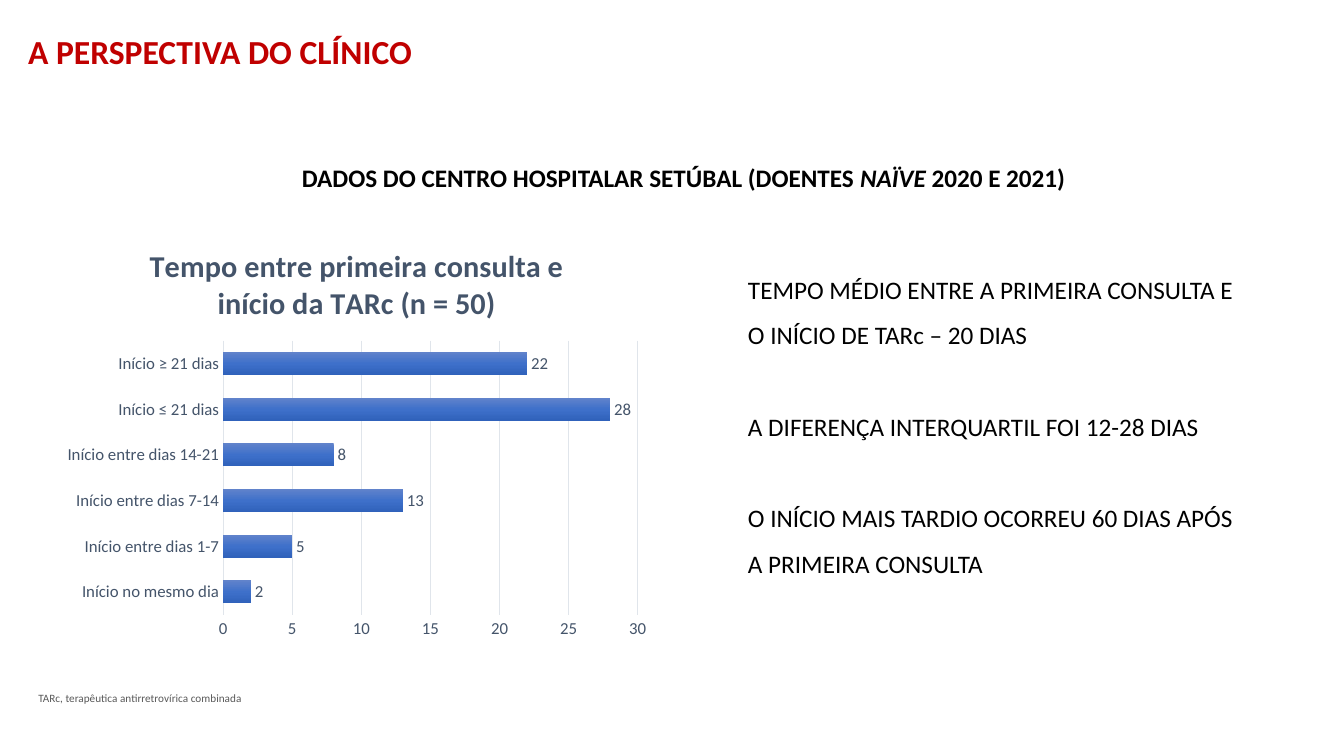
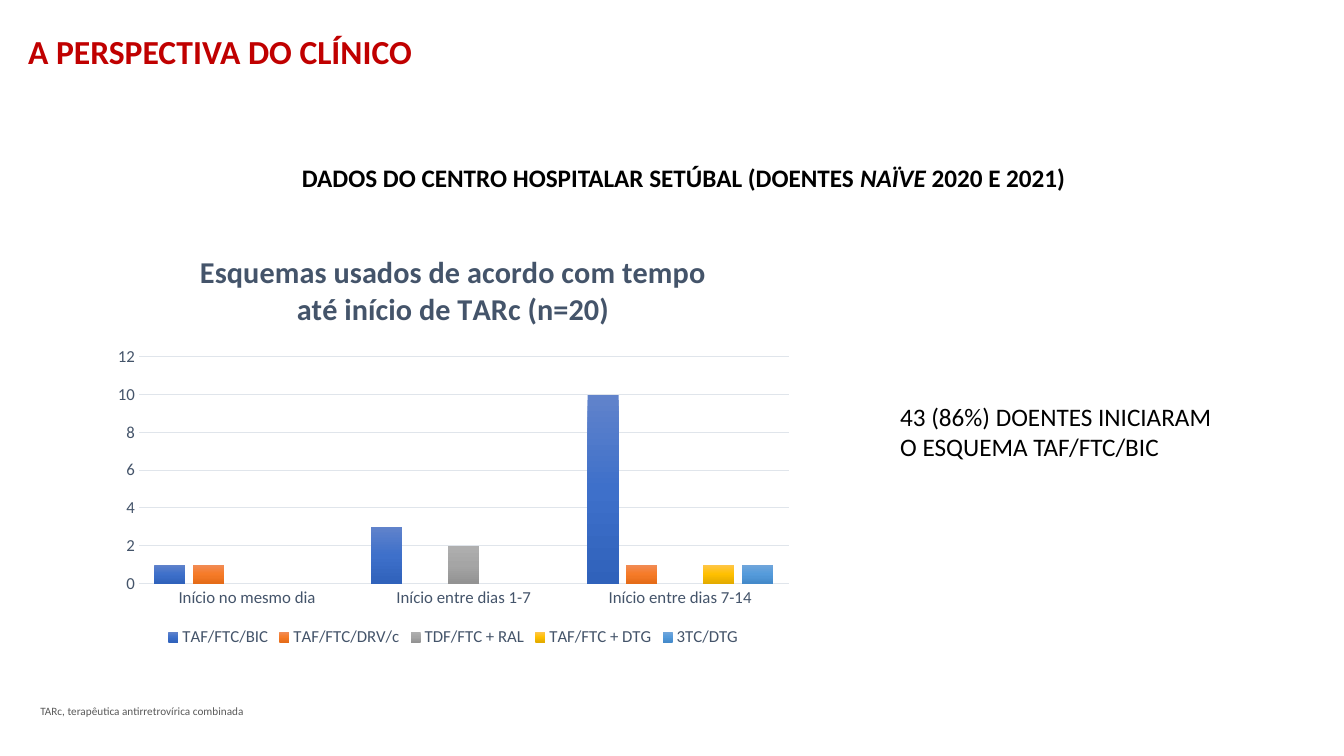
from copy import deepcopy

from pptx import Presentation
from pptx.chart.data import CategoryChartData
from pptx.dml.color import RGBColor
from pptx.enum.chart import XL_CHART_TYPE, XL_LABEL_POSITION, XL_LEGEND_POSITION, XL_TICK_MARK
from pptx.enum.text import PP_ALIGN
from pptx.util import Inches, Pt

BAR = XL_CHART_TYPE.BAR_CLUSTERED
COLUMN = XL_CHART_TYPE.COLUMN_CLUSTERED
OUTSIDE_END = XL_LABEL_POSITION.OUTSIDE_END
LEGEND_BOTTOM = XL_LEGEND_POSITION.BOTTOM
NO_TICK = XL_TICK_MARK.NONE
CENTER = PP_ALIGN.CENTER

FONT = "Calibri"
RED, BLACK, GRAY = "C00000", "000000", "595959"
SLATE, GRID = "44546A", "E0E5EB"
SERIES_GRADIENTS = [
    ("6183CB", "3E70CA", "3062BB"),
    ("F18C57", "F67B28", "E56C19"),
    ("AFAFAF", "A5A5A5", "939393"),
    ("FFC64B", "FFC000", "E3AB00"),
    ("71A6DB", "559BDB", "448ACA"),
]

TIME_CATEGORIES = [
    "Início no mesmo dia", "Início entre dias 1-7", "Início entre dias 7-14",
    "Início entre dias 14-21", "Início ≤ 21 dias", "Início ≥ 21 dias",
]
TIME_SERIES = {"Series 1": [2, 5, 13, 8, 28, 22]}
REGIMEN_SERIES = {
    "TAF/FTC/BIC": [1, 3, 10],
    "TAF/FTC/DRV/c": [1, None, 1],
    "TDF/FTC + RAL": [None, 2, None],
    "TAF/FTC + DTG": [None, None, 1],
    "3TC/DTG": [None, None, 1],
}
FINDINGS = [
    "TEMPO MÉDIO ENTRE A PRIMEIRA CONSULTA E O INÍCIO DE TARc – 20 DIAS",
    "A DIFERENÇA INTERQUARTIL FOI 12-28 DIAS",
    "O INÍCIO MAIS TARDIO OCORREU 60 DIAS APÓS A PRIMEIRA CONSULTA",
]


def color(hex_value):
    return RGBColor.from_string(hex_value)


def set_font(font, size, hex_value, bold=False):
    font.name = FONT
    font.size = Pt(size)
    font.color.rgb = color(hex_value)
    font.bold = bold


def add_text(slide, box, paragraphs, size=18, hex_value=BLACK, bold=False,
             align=None, line_spacing=None, space_after=0, inset=None):
    """Add a text box; each paragraph is a list of (text, italic) runs."""
    frame = slide.shapes.add_textbox(*map(Inches, box)).text_frame
    frame.word_wrap = True
    if inset is not None:
        frame.margin_left = frame.margin_right = Inches(inset)
        frame.margin_top = frame.margin_bottom = Inches(inset)
    for index, runs in enumerate(paragraphs):
        paragraph = frame.add_paragraph() if index else frame.paragraphs[0]
        for text, italic in runs:
            run = paragraph.add_run()
            run.text = text
            if italic:
                run.font.italic = True
        set_font(paragraph.font, size, hex_value, bold)
        paragraph.alignment = align
        paragraph.line_spacing = line_spacing
        paragraph.space_after = Pt(space_after)


def plain(*texts):
    """Turn each text into a paragraph of one upright run."""
    return [[(text, False)] for text in texts]


def fill_gradient(series, hex_values):
    """Fill with three evenly spaced colours from top to bottom."""
    fill = series.format.fill
    fill.gradient()
    fill.gradient_angle = 270
    stop_list = series._element.xpath(".//a:gsLst")[0]
    stop_list.insert(1, deepcopy(stop_list[0]))
    for index, (stop, hex_value) in enumerate(zip(fill.gradient_stops, hex_values)):
        stop.position = index / 2
        stop.color.rgb = color(hex_value)


def style_line(line, hex_value):
    line.width = Pt(0.75)
    line.color.rgb = color(hex_value)


def style_axes(chart, maximum, step):
    category_axis, value_axis = chart.category_axis, chart.value_axis
    for axis in (category_axis, value_axis):
        axis.major_tick_mark = axis.minor_tick_mark = NO_TICK
        set_font(axis.tick_labels.font, 12, SLATE)
    style_line(category_axis.format.line, GRID)
    value_axis.format.line.fill.background()
    value_axis.has_major_gridlines = True
    style_line(value_axis.major_gridlines.format.line, GRID)
    value_axis.minimum_scale = 0
    value_axis.maximum_scale = maximum
    value_axis.major_unit = step


def add_bar_chart(slide, kind, box, title, categories, series_values, maximum, step, overlap=0):
    data = CategoryChartData()
    data.categories = categories
    for name, values in series_values.items():
        data.add_series(name, values)
    chart = slide.shapes.add_chart(kind, *map(Inches, box), data).chart
    set_font(chart.font, 12, SLATE)
    chart.has_title = True
    chart.chart_title.text_frame.text = title
    set_font(chart.chart_title.text_frame.paragraphs[0].font, 21.6, SLATE, bold=True)
    chart.chart_title.include_in_layout = False
    chart.has_legend = False
    style_axes(chart, maximum, step)
    plot = chart.plots[0]
    plot.gap_width = 100
    plot.overlap = overlap
    plot.vary_by_categories = False
    for series, gradient in zip(plot.series, SERIES_GRADIENTS):
        fill_gradient(series, gradient)
    return chart


def add_value_labels(chart):
    plot = chart.plots[0]
    plot.has_data_labels = True
    labels = plot.data_labels
    labels.show_value = True
    labels.position = OUTSIDE_END
    set_font(labels.font, 12, SLATE)


def add_bottom_legend(chart):
    chart.has_legend = True
    chart.legend.position = LEGEND_BOTTOM
    chart.legend.include_in_layout = False
    set_font(chart.legend.font, 12, SLATE)


def add_clinic_slide(presentation, note_left, note_top):
    """Add a slide with the shared title, heading and footnote."""
    slide = presentation.slides.add_slide(presentation.slide_layouts[6])
    add_text(slide, (0.18, 0.26, 10.62, 0.5), plain("A PERSPECTIVA DO CLÍNICO"), 24, RED, bold=True)
    heading = [("DADOS DO CENTRO HOSPITALAR SETÚBAL (DOENTES ", False),
               ("NAÏVE", True), (" 2020 E 2021)", False)]
    add_text(slide, (1.42, 1.41, 10.72, 0.51), [heading], bold=True,
             align=CENTER, line_spacing=1.5)
    add_text(slide, (note_left, note_top, 9.47, 0.13),
             plain("TARc, terapêutica antirretrovírica combinada"), 8, GRAY, inset=0)
    return slide


def add_time_slide(presentation):
    slide = add_clinic_slide(presentation, 0.38, 6.86)
    chart = add_bar_chart(slide, BAR, (0.55, 2.23, 5.98, 4.19),
                          "Tempo entre primeira consulta e início da TARc (n = 50)",
                          TIME_CATEGORIES, TIME_SERIES, maximum=30, step=5)
    add_value_labels(chart)
    add_text(slide, (7.32, 2.52, 5.18, 3.23), plain(*FINDINGS), line_spacing=1.5, space_after=33)


def add_regimen_slide(presentation):
    slide = add_clinic_slide(presentation, 0.4, 6.99)
    chart = add_bar_chart(slide, COLUMN, (1.03, 2.29, 6.93, 4.17),
                          "Esquemas usados de acordo com tempo até início de TARc (n=20)",
                          TIME_CATEGORIES[:3], REGIMEN_SERIES, maximum=12, step=2, overlap=-24)
    add_bottom_legend(chart)
    add_text(slide, (8.83, 3.93, 3.3, 1.01),
             plain("43 (86%) DOENTES INICIARAM O ESQUEMA TAF/FTC/BIC"))


def main():
    presentation = Presentation()
    presentation.slide_width = Inches(13.33)
    presentation.slide_height = Inches(7.5)
    add_time_slide(presentation)
    add_regimen_slide(presentation)
    presentation.save("out.pptx")


if __name__ == "__main__":
    main()
